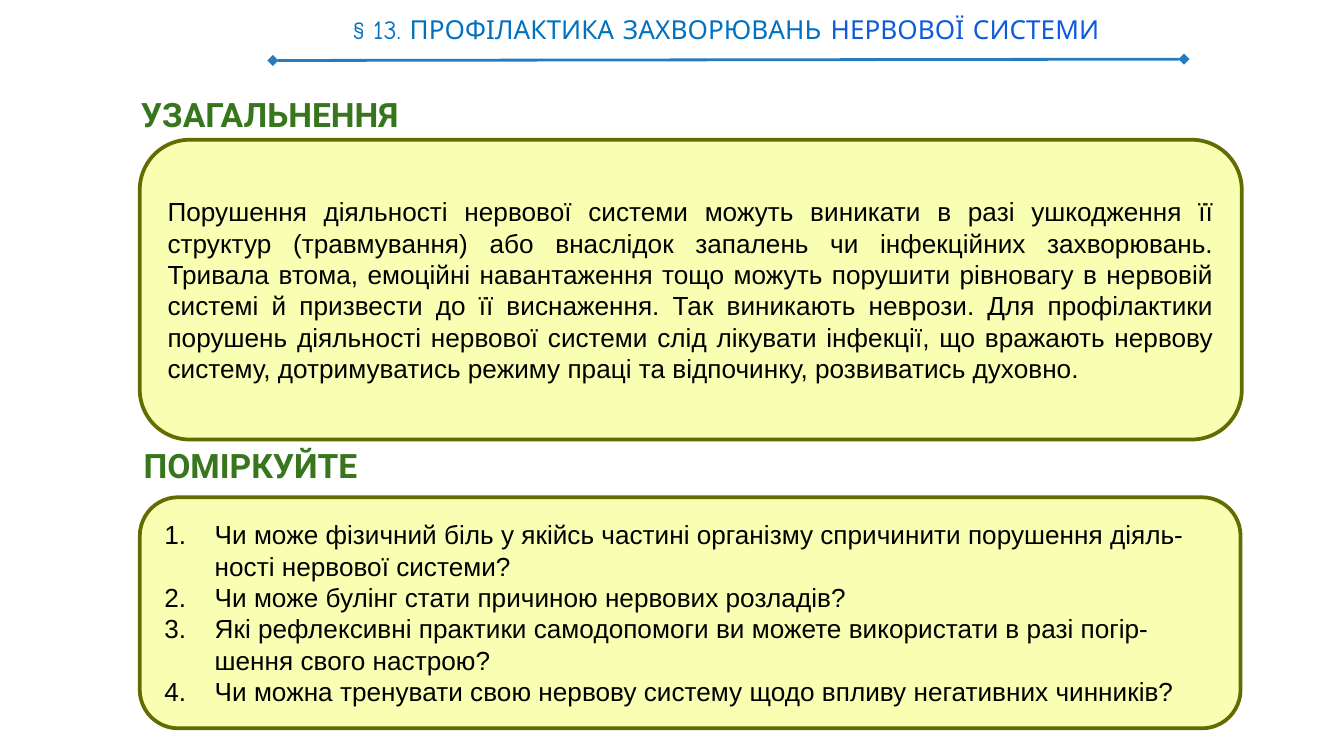
from lxml import etree
from pptx import Presentation
from pptx.dml.color import RGBColor
from pptx.enum.shapes import MSO_CONNECTOR, MSO_SHAPE
from pptx.enum.text import MSO_ANCHOR, PP_ALIGN
from pptx.oxml.ns import qn
from pptx.util import Pt

BLACK = RGBColor(0x00, 0x00, 0x00)
GREEN = RGBColor(0x38, 0x76, 0x1D)
OLIVE = RGBColor(0x62, 0x6C, 0x00)
LIME = RGBColor(0xF8, 0xFF, 0xB3)
RULE_BLUE = RGBColor(0x25, 0x7B, 0xBE)
TITLE_BLUE = RGBColor(0x00, 0x70, 0xC0)
BRIGHT_BLUE = RGBColor(0x0D, 0x5B, 0xDC)

TITLE = [
    ("§ 13. ПРОФІЛАКТИКА ЗАХВОРЮВАНЬ", TITLE_BLUE),
    (" НЕРВОВОЇ СИСТЕМИ", BRIGHT_BLUE),
]
SUMMARY = (
    "Порушення діяльності нервової системи можуть виникати в разі ушкодження її "
    "структур (травмування) або внаслідок запалень чи інфекційних захворювань. "
    "Тривала втома, емоційні навантаження тощо можуть порушити рівновагу в нервовій "
    "системі й призвести до її виснаження. Так виникають неврози. Для профілактики "
    "порушень діяльності нервової системи слід лікувати інфекції, що вражають нервову "
    "систему, дотримуватись режиму праці та відпочинку, розвиватись духовно."
)
QUESTIONS = [
    "Чи може фізичний біль у якійсь частині організму спричинити порушення діяль- "
    "ності нервової системи?",
    "Чи може булінг стати причиною нервових розладів?",
    "Які рефлексивні практики самодопомоги ви можете використати в разі погір- "
    "шення свого настрою?",
    "Чи можна тренувати свою нервову систему щодо впливу негативних чинників?",
]
# Heading text, heading box, panel box, panel paragraphs, panel format
SECTIONS = [
    ("УЗАГАЛЬНЕННЯ", (68.4, 43.2, 404.6, 36), (74.9, 74.9, 590.4, 160.6),
     [SUMMARY], {"align": PP_ALIGN.JUSTIFY}),
    ("ПОМІРКУЙТЕ", (69.8, 231.1, 404.6, 36), (74.9, 266.4, 589.7, 123.8),
     QUESTIONS, {"numbered": True}),
]
NUMBER_INDENT = Pt(27)


def number_paragraph(paragraph):
    properties = paragraph._p.get_or_add_pPr()
    properties.set("marL", str(NUMBER_INDENT))
    properties.set("indent", str(-NUMBER_INDENT))
    color = etree.SubElement(properties, qn("a:buClr"))
    etree.SubElement(color, qn("a:srgbClr"), val=str(BLACK))
    etree.SubElement(properties, qn("a:buFont"), typeface="Arial")
    etree.SubElement(properties, qn("a:buAutoNum"), type="arabicPeriod")


def write(frame, paragraphs, font="Arial", size=14, bold=False,
          align=PP_ALIGN.LEFT, numbered=False):
    """Fill a text frame; each paragraph is a list of (text, colour) runs."""
    frame.word_wrap = True
    for index, runs in enumerate(paragraphs):
        paragraph = frame.add_paragraph() if index else frame.paragraphs[0]
        if numbered:
            number_paragraph(paragraph)
        paragraph.alignment = align
        for text, color in runs:
            run = paragraph.add_run()
            run.text = text
            run.font.name = font
            run.font.size = Pt(size)
            run.font.bold = bold
            run.font.color.rgb = color


def add_text(slide, box, runs, **text_format):
    frame = slide.shapes.add_textbox(*map(Pt, box)).text_frame
    frame.margin_left = frame.margin_right = Pt(7.2)
    frame.margin_top = frame.margin_bottom = Pt(7.2)
    write(frame, [runs], **text_format)


def add_panel(slide, box, texts, **text_format):
    shape = slide.shapes.add_shape(MSO_SHAPE.ROUNDED_RECTANGLE, *map(Pt, box))
    shape.shadow.inherit = False
    shape.fill.solid()
    shape.fill.fore_color.rgb = LIME
    shape.line.color.rgb = OLIVE
    shape.line.width = Pt(2)
    shape.text_frame.vertical_anchor = MSO_ANCHOR.MIDDLE
    write(shape.text_frame, [[(text, BLACK)] for text in texts], **text_format)


def add_title_rule(slide, *ends):
    rule = slide.shapes.add_connector(MSO_CONNECTOR.STRAIGHT, *map(Pt, ends))
    rule.line.color.rgb = RULE_BLUE
    rule.line.width = Pt(1.5)
    line = rule.line._get_or_add_ln()
    for tag in ("a:headEnd", "a:tailEnd"):
        etree.SubElement(line, qn(tag), type="diamond")
    etree.SubElement(rule._element.spPr, qn("a:effectLst"))


def main():
    presentation = Presentation()
    presentation.slide_width = Pt(720)
    presentation.slide_height = Pt(405)
    slide = presentation.slides.add_slide(presentation.slide_layouts[6])

    add_title_rule(slide, 146.2, 32.4, 634.3, 31.7)
    for heading, heading_box, panel_box, texts, text_format in SECTIONS:
        add_text(slide, heading_box, [(heading, GREEN)],
                 font="Roboto", size=18, bold=True)
        add_panel(slide, panel_box, texts, **text_format)
    add_text(slide, (133.2, 0, 511.9, 31.7), TITLE,
             font="Comic Neue", align=PP_ALIGN.CENTER)

    presentation.save("out.pptx")


if __name__ == "__main__":
    main()
